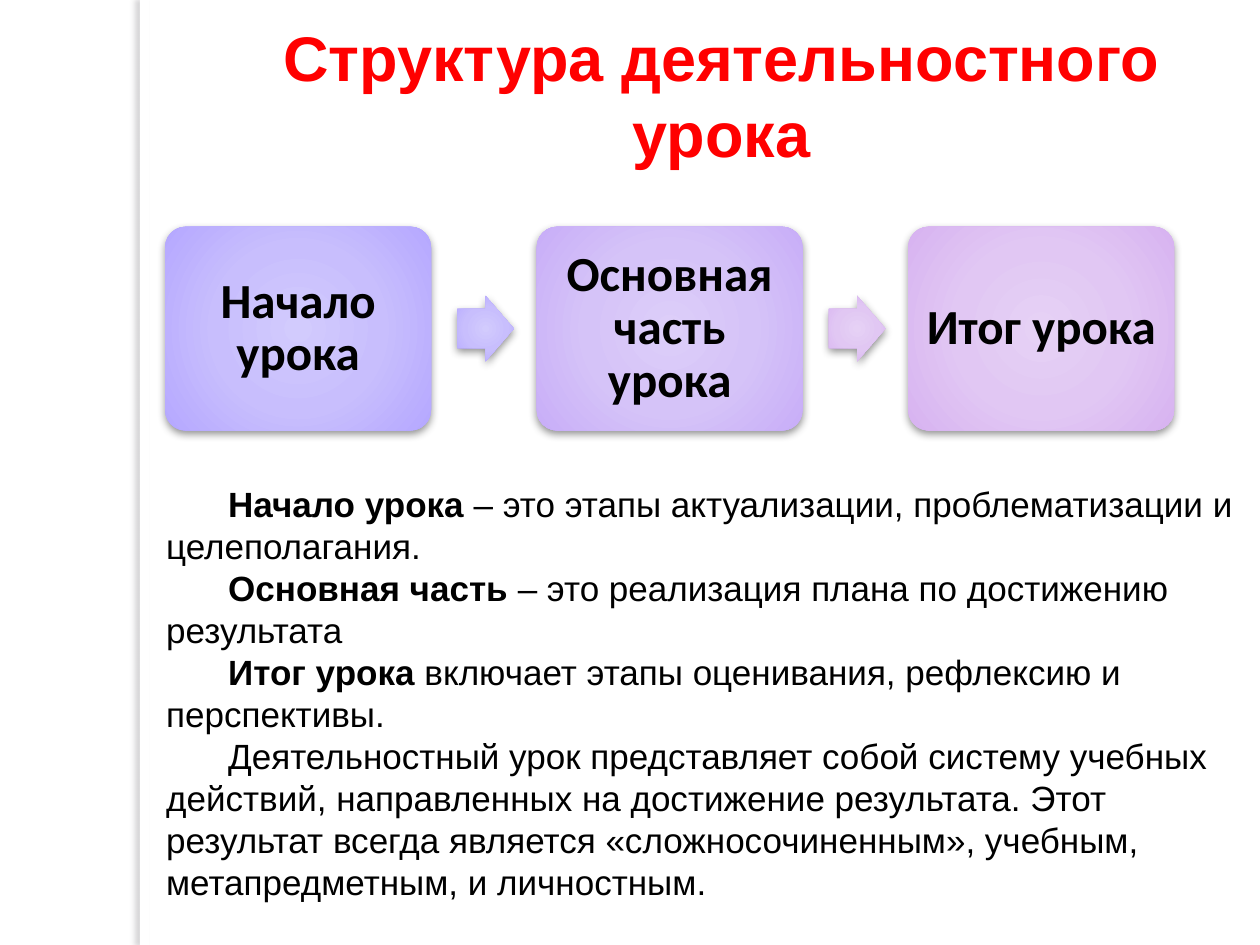
from dataclasses import dataclass

from lxml import etree
from pptx import Presentation
from pptx.dml.color import RGBColor
from pptx.enum import shapes, text
from pptx.oxml.ns import qn
from pptx.util import Cm, Pt


@dataclass(frozen=True)
class Theme:
    red: str = "FF0000"
    black: str = "000000"
    white: str = "FFFFFF"
    edge: str = "646068"
    blue: tuple = ("D2CBFD", "C8BEFD", "B6A9FF", "B1A3FF")
    violet: tuple = ("DDCEF9", "D5C3F8", "C9AFF8", "C5A7FA")
    pink: tuple = ("E6D1F5", "E1C7F3", "D8B4F1", "D6ADF2")
    sans: str = "Arial"
    label: str = "Calibri"
    head: int = 36
    step: int = 28
    body: int = 20


@dataclass(frozen=True)
class Step:
    name: str
    tint: tuple


@dataclass(frozen=True)
class Note:
    term: str
    rest: str


THEME = Theme()
STEPS = (
    Step("Начало урока", THEME.blue),
    Step("Основная часть урока", THEME.violet),
    Step("Итог урока", THEME.pink),
)
ARROWS = (THEME.blue, THEME.pink)
NOTES = (
    Note("Начало урока", " – это этапы актуализации, проблематизации и целеполагания."),
    Note("Основная часть", " – это реализация плана по достижению результата"),
    Note("Итог урока", " включает этапы оценивания, рефлексию и перспективы."),
    Note("", "Деятельностный урок представляет собой систему учебных действий, "
             "направленных на достижение результата. Этот результат всегда является "
             "«сложносочиненным», учебным, метапредметным, и личностным."),
)
LEFT, TOP, WIDE, HIGH, PITCH = 3.33, 4.57, 5.36, 4.11, 7.49
GAP, TIP_W, TIP_H = 0.53, 1.14, 1.32


def write(para, words: str, *, size: int, font: str = THEME.sans,
          color: str = THEME.black, bold: bool = False) -> None:
    run = para.add_run()
    run.text = words
    run.font.size = Pt(size)
    run.font.name = font
    run.font.bold = bold
    run.font.color.rgb = RGBColor.from_string(color)


def shade(shape, color: str, alpha: int, blur: int, dist: int, angle: int) -> None:
    shape.shadow.inherit = False
    effect = shape._element.spPr.find(qn("a:effectLst"))
    outer = etree.SubElement(effect, qn("a:outerShdw"), blurRad=str(Pt(blur)),
                             dist=str(Pt(dist)), dir=str(angle * 60000),
                             algn="ctr", rotWithShape="0")
    tone = etree.SubElement(outer, qn("a:srgbClr"), val=color)
    etree.SubElement(tone, qn("a:alpha"), val=str(alpha * 1000))


def glow(shape, tint: tuple) -> None:
    shape.fill.solid()
    solid = shape._element.spPr.find(qn("a:solidFill"))
    grad = etree.Element(qn("a:gradFill"), rotWithShape="1")
    stops = etree.SubElement(grad, qn("a:gsLst"))
    for pos, color in zip((0, 50, 97, 100), tint):
        stop = etree.SubElement(stops, qn("a:gs"), pos=str(pos * 1000))
        etree.SubElement(stop, qn("a:srgbClr"), val=color)
    way = etree.SubElement(grad, qn("a:path"), path="circle")
    etree.SubElement(way, qn("a:fillToRect"), l="50000", t="50000", r="50000", b="50000")
    solid.getparent().replace(solid, grad)


def block(slide, kind, left: float, top: float, wide: float, high: float):
    shape = slide.shapes.add_shape(kind, Cm(left), Cm(top), Cm(wide), Cm(high))
    shape.line.fill.background()
    return shape


def strip(slide) -> None:
    shape = block(slide, shapes.MSO_SHAPE.RECTANGLE, 2.82, 0, 0.2, 19.05)
    shape.fill.solid()
    shape.fill.fore_color.rgb = RGBColor.from_string(THEME.white)
    shade(shape, THEME.edge, 25, 3, 3, 180)


def title(slide) -> None:
    shape = slide.shapes.title
    shape.left, shape.top, shape.width, shape.height = Cm(3.51), Cm(0.23), Cm(22.07), Cm(3.33)
    frame = shape.text_frame
    frame.auto_size = text.MSO_AUTO_SIZE.NONE
    frame.vertical_anchor = text.MSO_ANCHOR.MIDDLE
    para = frame.paragraphs[0]
    para.alignment = text.PP_ALIGN.CENTER
    write(para, "Структура деятельностного урока", size=THEME.head,
          color=THEME.red, bold=True)


def card(slide, step: Step, left: float) -> None:
    shape = block(slide, shapes.MSO_SHAPE.ROUNDED_RECTANGLE, left, TOP, WIDE, HIGH)
    shape.adjustments[0] = 0.1
    glow(shape, step.tint)
    shade(shape, THEME.black, 43, 5, 2, 90)
    frame = shape.text_frame
    frame.word_wrap = True
    frame.vertical_anchor = text.MSO_ANCHOR.MIDDLE
    frame.margin_left = frame.margin_right = Cm(0.18)
    frame.margin_top = frame.margin_bottom = Cm(0.18)
    para = frame.paragraphs[0]
    para.alignment = text.PP_ALIGN.CENTER
    para.line_spacing = 0.9
    write(para, step.name, size=THEME.step, font=THEME.label, bold=True)


def arrow(slide, tint: tuple, left: float) -> None:
    shape = block(slide, shapes.MSO_SHAPE.RIGHT_ARROW, left,
                  TOP + (HIGH - TIP_H) / 2, TIP_W, TIP_H)
    shape.adjustments[0] = 0.6
    shape.adjustments[1] = 0.5
    glow(shape, tint)
    shade(shape, THEME.black, 43, 5, 2, 90)


def body(slide) -> None:
    frame = slide.shapes.add_textbox(Cm(3.1), Cm(9.55), Cm(22.3), Cm(8.81)).text_frame
    frame.word_wrap = True
    frame.vertical_anchor = text.MSO_ANCHOR.MIDDLE
    for i, note in enumerate(NOTES):
        para = frame.add_paragraph() if i else frame.paragraphs[0]
        para._p.get_or_add_pPr().set("indent", str(Cm(1.25)))
        if note.term:
            write(para, note.term, size=THEME.body, bold=True)
        write(para, note.rest, size=THEME.body)


def main() -> None:
    deck = Presentation()
    deck.slide_width, deck.slide_height = Cm(25.4), Cm(19.05)
    slide = deck.slides.add_slide(deck.slide_layouts[5])
    strip(slide)
    title(slide)
    for i, step in enumerate(STEPS):
        card(slide, step, LEFT + i * PITCH)
    for i, tint in enumerate(ARROWS):
        arrow(slide, tint, LEFT + i * PITCH + WIDE + GAP)
    body(slide)
    deck.save("out.pptx")


if __name__ == "__main__":
    main()
